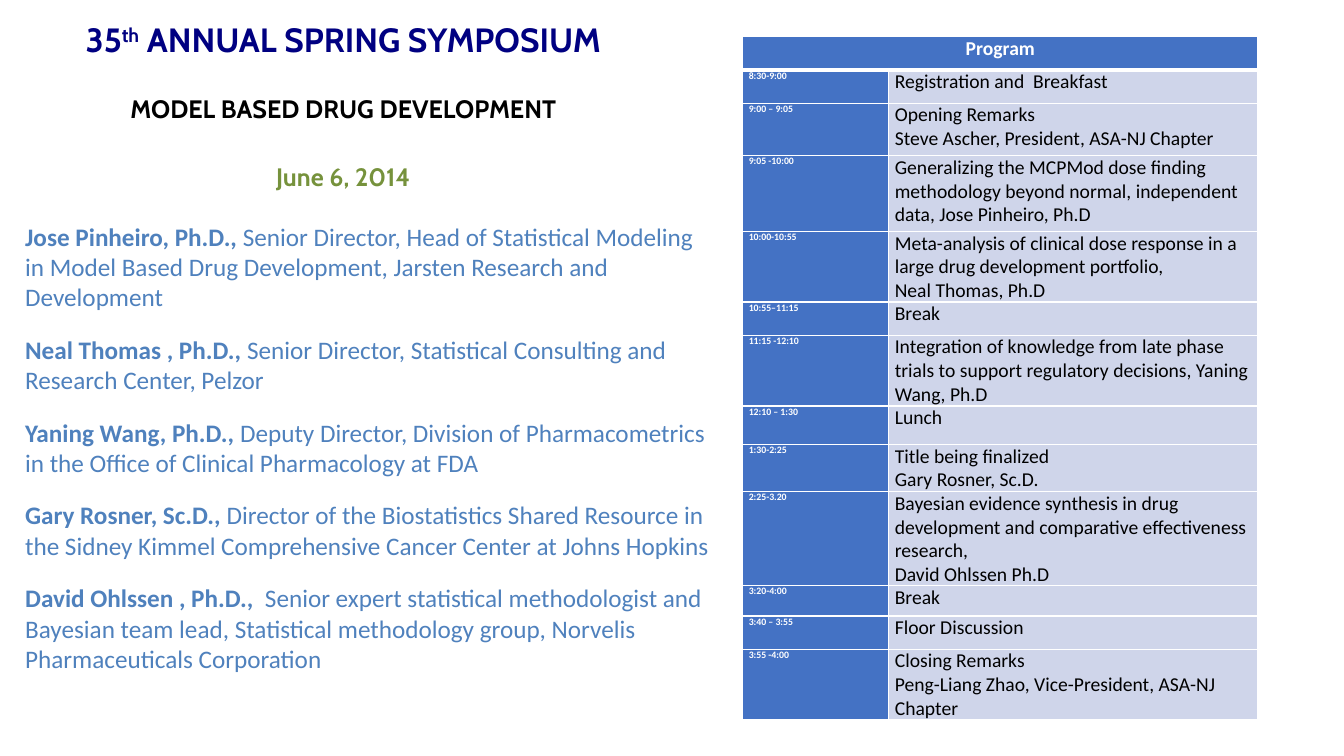
from dataclasses import dataclass
from typing import Any

import pptx
import pptx.dml.color
import pptx.enum.text
import pptx.oxml
import pptx.oxml.ns
import pptx.util
from pptx.dml.color import RGBColor
from pptx.util import Cm, Pt

NAVY = RGBColor(0x00, 0x00, 0x81)
BLACK = RGBColor(0x00, 0x00, 0x00)
WHITE = RGBColor(0xFF, 0xFF, 0xFF)
OLIVE = RGBColor(0x76, 0x92, 0x3C)
STEEL = RGBColor(0x4F, 0x81, 0xBD)
BLUE = RGBColor(0x44, 0x72, 0xC4)
PALE = RGBColor(0xCF, 0xD5, 0xEA)

CENTER = pptx.enum.text.PP_ALIGN.CENTER
LEFT = pptx.enum.text.PP_ALIGN.LEFT


@dataclass
class Style:
    font: str
    size: float
    color: RGBColor
    bold: bool = False


@dataclass
class Heading:
    texts: list[str]
    style: Style
    before: float = 0
    after: float = 0
    spacing: float = 1.0


@dataclass
class Speaker:
    name: str
    post: str


@dataclass
class Session:
    time: str
    lines: list[str]
    height: float


HEADINGS = [
    Heading(["35", "th", " ANNUAL SPRING SYMPOSIUM"], Style("Cabin", 24, NAVY, True)),
    Heading(["MODEL BASED DRUG DEVELOPMENT"], Style("Cabin", 18, BLACK, True), before=24.3),
    Heading(["June 6, 2014"], Style("Cabin", 18, OLIVE, True), before=21.3, after=6, spacing=1.25),
]

SPEAKERS = [
    Speaker("Jose Pinheiro, Ph.D.,", " Senior Director, Head of Statistical Modeling in Model Based "
            "Drug Development, Jarsten Research and Development"),
    Speaker("Neal Thomas , Ph.D.,", " Senior Director, Statistical Consulting and Research Center, Pelzor"),
    Speaker("Yaning Wang, Ph.D.,", " Deputy Director, Division of Pharmacometrics in the Office of "
            "Clinical Pharmacology at FDA"),
    Speaker("Gary Rosner, Sc.D.,", " Director of the Biostatistics Shared Resource in the Sidney Kimmel "
            "Comprehensive Cancer Center at Johns Hopkins"),
    Speaker("David Ohlssen , Ph.D.,", "  Senior expert statistical methodologist and Bayesian team lead, "
            "Statistical methodology group, Norvelis Pharmaceuticals Corporation"),
]

HEADER_HEIGHT = 0.84
COLUMN_WIDTHS = [3.68, 9.3]
SESSIONS = [
    Session("8:30-9:00", ["Registration and  Breakfast"], 0.84),
    Session("9:00 – 9:05", ["Opening Remarks", "Steve Ascher, President, ASA-NJ Chapter"], 1.32),
    Session("9:05 -10:00", ["Generalizing the MCPMod dose finding methodology beyond normal, "
                            "independent data, Jose Pinheiro, Ph.D"], 1.91),
    Session("10:00-10:55", ["Meta-analysis of clinical dose response in a large drug development "
                            "portfolio,", "Neal Thomas, Ph.D"], 1.7),
    Session("10:55–11:15", ["Break"], 0.84),
    Session("11:15 -12:10", ["Integration of knowledge from late phase trials to support regulatory "
                             "decisions, Yaning Wang, Ph.D"], 1.7),
    Session("12:10 – 1:30", ["Lunch"], 0.97),
    Session("1:30-2:25", ["Title being finalized", "Gary Rosner, Sc.D."], 1.07),
    Session("2:25-3.20", ["Bayesian evidence synthesis in drug development and comparative "
                          "effectiveness research,", "David Ohlssen Ph.D"], 2.13),
    Session("3:20-4:00", ["Break"], 0.76),
    Session("3:40 – 3:55", ["Floor Discussion"], 0.84),
    Session("3:55 -4:00", ["Closing Remarks", "Peng-Liang Zhao, Vice-President, ASA-NJ Chapter"], 1.6),
]

HEADER_STYLE = Style("Calibri", 14, WHITE, True)
TIME_STYLE = Style("Calibri", 7, WHITE, True)
SESSION_STYLE = Style("Calibri", 14, BLACK)
NAME_STYLE = Style("Calibri", 18, STEEL, True)
POST_STYLE = Style("Calibri", 18, STEEL)


def apply(target: Any, values: dict[str, Any]) -> None:
    for name, value in values.items():
        setattr(target, name, value)


def add_span(para: Any, text: str, style: Style) -> Any:
    span = para.add_run()
    span.text = text
    apply(span.font, {"name": style.font, "size": Pt(style.size), "bold": style.bold})
    span.font.color.rgb = style.color
    return span


def next_para(frame: Any, index: int) -> Any:
    return frame.paragraphs[0] if index == 0 else frame.add_paragraph()


def place(box: Any, left: float, top: float, width: float, height: float) -> Any:
    apply(box, {"left": Cm(left), "top": Cm(top), "width": Cm(width), "height": Cm(height)})
    apply(box.text_frame, {
        "word_wrap": True,
        "auto_size": pptx.enum.text.MSO_AUTO_SIZE.SHAPE_TO_FIT_TEXT,
        "vertical_anchor": pptx.enum.text.MSO_ANCHOR.TOP,
    })
    return box.text_frame


def fill_title(frame: Any) -> None:
    for index, heading in enumerate(HEADINGS):
        para = next_para(frame, index)
        apply(para, {"alignment": CENTER, "space_before": Pt(heading.before),
                     "space_after": Pt(heading.after), "line_spacing": heading.spacing})
        for text in heading.texts:
            span = add_span(para, text, heading.style)
            if text == "th":
                span.font._element.set("baseline", "30000")


def fill_speakers(frame: Any) -> None:
    for index, speaker in enumerate(SPEAKERS):
        para = next_para(frame, index)
        apply(para, {"alignment": LEFT, "space_before": Pt(12),
                     "space_after": Pt(4), "line_spacing": 1.0})
        add_span(para, speaker.name, NAME_STYLE)
        add_span(para, speaker.post, POST_STYLE)
        # No bullet and no hanging indent
        properties = para._p.get_or_add_pPr()
        properties.set("marL", "0")
        properties.set("indent", "0")
        properties.append(pptx.oxml.parse_xml(f'<a:buNone {pptx.oxml.ns.nsdecls("a")}/>'))


def fill_cell(cell: Any, lines: list[str], style: Style, fill: RGBColor,
              align: Any = LEFT, bottom: float = 1) -> None:
    apply(cell, {"margin_left": Cm(0.15), "margin_right": Cm(0.15),
                 "margin_top": 0, "margin_bottom": 0})
    cell.fill.solid()
    cell.fill.fore_color.rgb = fill
    for index, line in enumerate(lines):
        para = next_para(cell.text_frame, index)
        para.alignment = align
        add_span(para, line, style)
    # Cell borders come before the fill
    widths = {"lnL": 1, "lnR": 1, "lnT": 1, "lnB": bottom}
    for position, (side, width) in enumerate(widths.items()):
        border = pptx.oxml.parse_xml(
            f'<a:{side} {pptx.oxml.ns.nsdecls("a")} w="{Pt(width)}">'
            f'<a:solidFill><a:srgbClr val="{WHITE}"/></a:solidFill></a:{side}>')
        cell._tc.get_or_add_tcPr().insert(position, border)


def add_program(page: Any) -> None:
    heights = [HEADER_HEIGHT] + [session.height for session in SESSIONS]
    program = page.shapes.add_table(len(heights), len(COLUMN_WIDTHS), Cm(18.72), Cm(0.92),
                                    Cm(sum(COLUMN_WIDTHS)), Cm(sum(heights))).table
    program.horz_banding = False
    for column, width in zip(program.columns, COLUMN_WIDTHS):
        column.width = Cm(width)
    for row, height in zip(program.rows, heights):
        row.height = Cm(height)

    program.cell(0, 0).merge(program.cell(0, 1))
    fill_cell(program.cell(0, 0), ["Program"], HEADER_STYLE, BLUE, CENTER, bottom=3)
    for number, session in enumerate(SESSIONS, start=1):
        fill_cell(program.cell(number, 0), [session.time], TIME_STYLE, BLUE)
        fill_cell(program.cell(number, 1), session.lines, SESSION_STYLE, PALE)


def main() -> None:
    deck = pptx.Presentation()
    apply(deck, {"slide_width": Cm(33.87), "slide_height": Cm(19.05)})
    page = deck.slides.add_slide(deck.slide_layouts[1])

    # Symposium title, theme and date
    fill_title(place(page.shapes.title, -3.58, 0.36, 24.46, 4.55))
    # Speakers
    fill_speakers(place(page.placeholders[1], 0.38, 5.44, 17.96, 11.76))
    # Program of the day
    add_program(page)

    deck.save("out.pptx")


if __name__ == "__main__":
    main()
